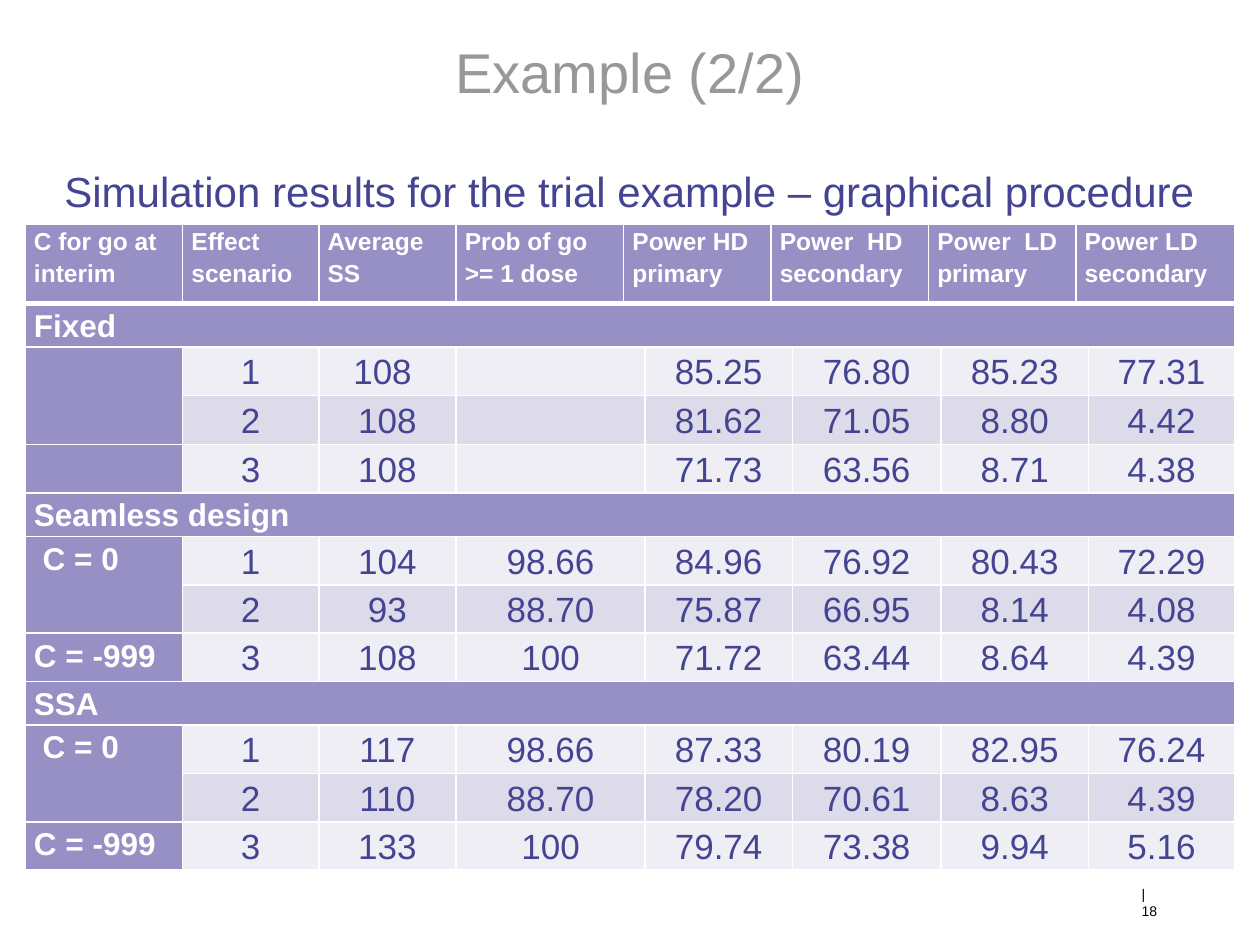
from itertools import pairwise

from lxml import etree
from pptx import Presentation
from pptx import util as u
from pptx.dml.color import RGBColor
from pptx.enum import text
from pptx.oxml import ns

TITLE = "Example (2/2)"
SUBTITLE = "Simulation results for the trial example – graphical procedure"
PAGE_NUMBER = "18"
HEADERS = ["C for go at interim", "Effect scenario", "Average SS", "Prob of go >= 1 dose",
           "Power HD primary", "Power  HD secondary", "Power  LD primary", "Power LD secondary"]
# Each section: heading, then one row per effect scenario.
# A label of None continues the cell above it.
SECTIONS = [
    ("Fixed", [
        ("", "1", "108 ", "", "85.25", "76.80", "85.23", "77.31"),
        (None, "2", "108", "", "81.62", "71.05", "8.80", "4.42"),
        ("", "3", "108", "", "71.73", "63.56", "8.71", "4.38"),
    ]),
    ("Seamless design", [
        (" C = 0", "1", "104", "98.66", "84.96", "76.92", "80.43", "72.29"),
        (None, "2", "93", "88.70", "75.87", "66.95", "8.14", "4.08"),
        ("C = -999", "3", "108", "100", "71.72", "63.44", "8.64", "4.39"),
    ]),
    ("SSA", [
        (" C = 0", "1", "117", "98.66", "87.33", "80.19", "82.95", "76.24"),
        (None, "2", "110", "88.70", "78.20", "70.61", "8.63", "4.39"),
        ("C = -999", "3", "133", "100", "79.74", "73.38", "9.94", "5.16"),
    ]),
]

THEME = {
    "font": "Arial",
    "title": (32, "989898"), "subtitle": (24, "444492"), "footer": (8, "000000"),
    "header": (14, "FFFFFF"), "label": (18, "FFFFFF"), "value": (20, "444492"),
    "head_fill": "9690C4", "bands": ("EFEEF5", "DDDBEA"), "border": "FFFFFF",
}

SLIDE_SIZE = (10, 7.5)
TABLE_AT = (0.2, 1.78)
COLUMNS = [1.25, 1.08, 1.09, 1.33, 0.17, 1, 0.17, 1.08, 0.1, 1.07, 0.1, 1.16]
ROWS = [0.63, 0.34, 0.36, 0.39, 0.3, 0.34, 0.34, 0.34, 0.32, 0.34, 0.34, 0.34, 0.34]
# Grid lines where the cells of a header or value row begin and end.
HEADER_EDGES = [0, 1, 2, 3, 4, 6, 8, 10, 12]
VALUE_EDGES = [0, 1, 2, 3, 5, 7, 9, 11, 12]
CELL_MARGIN = 0.07


def style(para, role, align, spacing=1.0, bold=False):
    size, colour = THEME[role]
    para.alignment = align
    para.line_spacing = spacing
    para.font.name = THEME["font"]
    para.font.size = u.Pt(size)
    para.font.bold = bold
    para.font.color.rgb = RGBColor.from_string(colour)


def add_text(page, area, words):
    box = page.shapes.add_textbox(*(u.Inches(v) for v in area))
    frame = box.text_frame
    frame.word_wrap = True
    frame.margin_left = frame.margin_right = frame.margin_top = frame.margin_bottom = 0
    para = frame.paragraphs[0]
    para.text = words
    return frame, para


def add_borders(cell, bottom):
    properties = cell._tc.get_or_add_tcPr()
    widths = {"lnL": 1, "lnR": 1, "lnT": 1, "lnB": bottom}
    for index, (side, width) in enumerate(widths.items()):
        line = etree.Element(ns.qn(f"a:{side}"), w=str(u.Pt(width)))
        fill = etree.SubElement(line, ns.qn("a:solidFill"))
        etree.SubElement(fill, ns.qn("a:srgbClr"), val=THEME["border"])
        properties.insert(index, line)


def fill_cell(cell, words, role, fill):
    cell.margin_left = cell.margin_right = u.Inches(CELL_MARGIN)
    cell.margin_top = cell.margin_bottom = 0
    cell.fill.solid()
    cell.fill.fore_color.rgb = RGBColor.from_string(fill)
    if words:
        para = cell.text_frame.paragraphs[0]
        para.text = words
        is_value = role == "value"
        align = text.PP_ALIGN.CENTER if is_value else text.PP_ALIGN.LEFT
        style(para, role, align, 1.15, bold=not is_value)


def span_cell(table, row, start, end, rows=1):
    """Return the cell that covers the grid columns from start up to end."""
    cell = table.cell(row, start)
    if end - start > 1 or rows > 1:
        cell.merge(table.cell(row + rows - 1, end - 1))
    return cell


def add_results(page):
    size = (sum(COLUMNS), sum(ROWS))
    frame = page.shapes.add_table(len(ROWS), len(COLUMNS),
                                  *(u.Inches(v) for v in TABLE_AT + size))
    table = frame.table
    table.first_row = table.horz_banding = False
    for column, width in zip(table.columns, COLUMNS):
        column.width = u.Inches(width)
    for index, (row, height) in enumerate(zip(table.rows, ROWS)):
        row.height = u.Inches(height)
        for cell in row.cells:
            add_borders(cell, bottom=3 if index == 0 else 1)

    head_fill = THEME["head_fill"]
    for words, (start, end) in zip(HEADERS, pairwise(HEADER_EDGES)):
        fill_cell(span_cell(table, 0, start, end), words, "header", head_fill)

    row = 1
    for heading, scenarios in SECTIONS:
        fill_cell(span_cell(table, row, 0, len(COLUMNS)), heading, "label", head_fill)
        labels = [scenario[0] for scenario in scenarios] + [""]
        for index, (label, *values) in enumerate(scenarios):
            row += 1
            if label is not None:
                height = 2 if labels[index + 1] is None else 1
                fill_cell(span_cell(table, row, 0, 1, height), label, "label", head_fill)
            for words, (start, end) in zip(values, pairwise(VALUE_EDGES[1:])):
                fill_cell(span_cell(table, row, start, end), words, "value",
                          THEME["bands"][index % 2])
        row += 1


def add_page_number(page):
    frame, para = add_text(page, (8.84, 7.03, 0.53, 0.26), f"|\t{PAGE_NUMBER}")
    frame.margin_left = u.Inches(0.22)
    tabs = etree.SubElement(para._p.get_or_add_pPr(), ns.qn("a:tabLst"))
    etree.SubElement(tabs, ns.qn("a:tab"), pos=str(u.Inches(0.19)), algn="l")
    style(para, "footer", text.PP_ALIGN.LEFT)


def main():
    deck = Presentation()
    deck.slide_width, deck.slide_height = (u.Inches(v) for v in SLIDE_SIZE)
    page = deck.slides.add_slide(deck.slide_layouts[6])
    _, title = add_text(page, (0.12, 0.36, 9.76, 0.71), TITLE)
    style(title, "title", text.PP_ALIGN.CENTER, 0.9)
    _, subtitle = add_text(page, (0.35, 1.31, 9.29, 5.67), SUBTITLE)
    style(subtitle, "subtitle", text.PP_ALIGN.CENTER)
    add_page_number(page)
    add_results(page)
    deck.save("out.pptx")


if __name__ == "__main__":
    main()
